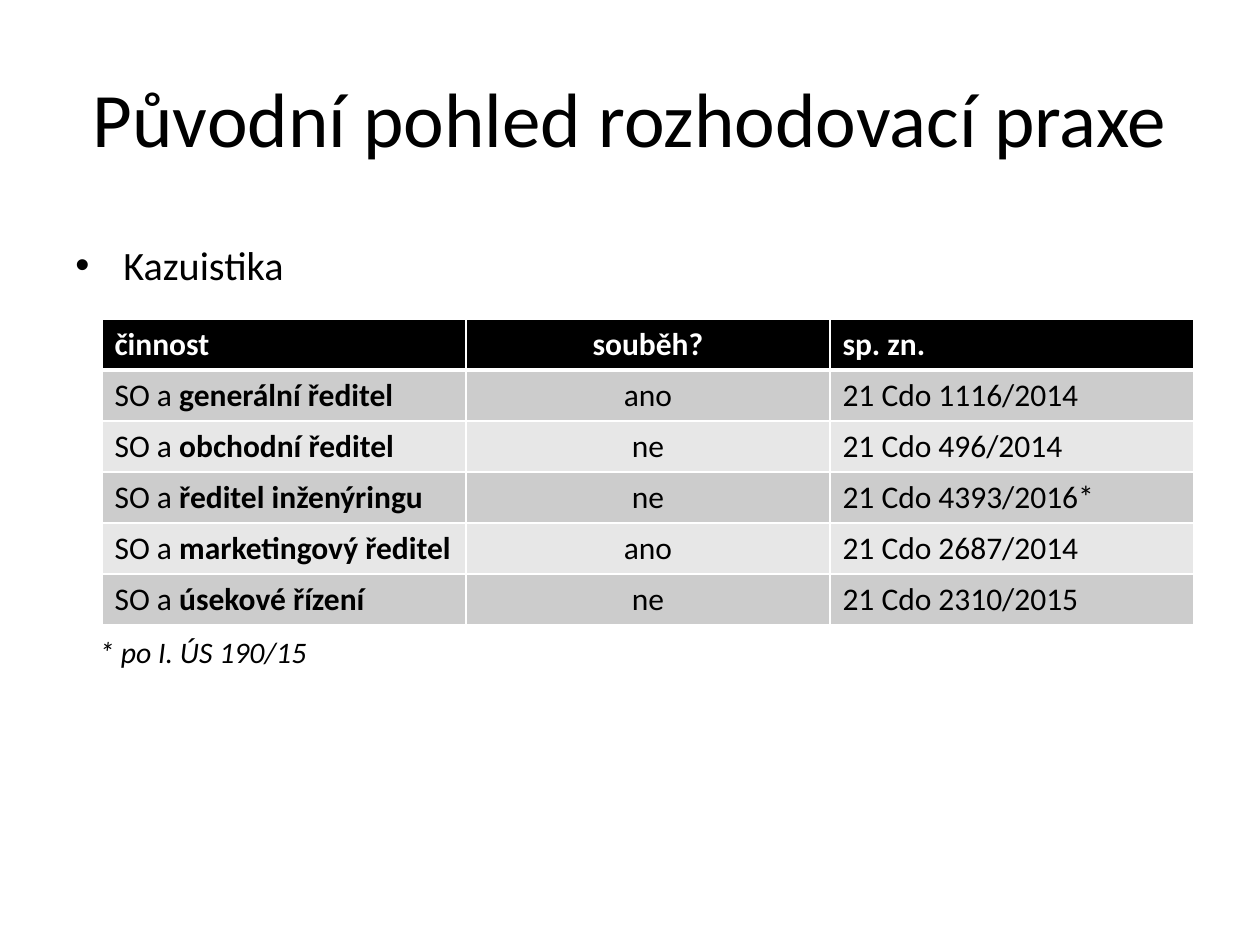
from lxml import etree
from pptx import Presentation
from pptx.dml.color import RGBColor
from pptx.enum.text import MSO_ANCHOR, PP_ALIGN
from pptx.oxml.ns import qn
from pptx.util import Emu, Pt

LEFT, CENTER = PP_ALIGN.LEFT, PP_ALIGN.CENTER
TOP, MIDDLE = MSO_ANCHOR.TOP, MSO_ANCHOR.MIDDLE
EMU_PER_PX = 914400 / 126
FONT = "Calibri"
COLORS = {
    "text": "000000",
    "header": "000000",
    "header_text": "FFFFFF",
    "band_dark": "CCCCCC",
    "band_light": "E7E7E7",
    "border": "FFFFFF",
}
HEADINGS = ("činnost", "souběh?", "sp. zn.")
CASES = [
    ("generální ředitel", "ano", "21 Cdo 1116/2014"),
    ("obchodní ředitel", "ne", "21 Cdo 496/2014"),
    ("ředitel inženýringu", "ne", "21 Cdo 4393/2016*"),
    ("marketingový ředitel", "ano", "21 Cdo 2687/2014"),
    ("úsekové řízení", "ne", "21 Cdo 2310/2015"),
]
COLUMN_WIDTH, ROW_HEIGHT = 364, 51


def px(length):
    return Emu(round(length * EMU_PER_PX))


def style_paragraph(para, size, color="text", align=LEFT):
    para.alignment = align
    para.font.name = FONT
    para.font.size = Pt(size)
    para.font.color.rgb = RGBColor.from_string(COLORS[color])


def add_text(slide, bounds, text, size, align=LEFT, anchor=TOP):
    box = slide.shapes.add_textbox(*map(px, bounds))
    frame = box.text_frame
    frame.word_wrap = True
    frame.vertical_anchor = anchor
    para = frame.paragraphs[0]
    para.text = text
    style_paragraph(para, size, align=align)
    return para


def add_bullet(para, indent):
    properties = para._p.get_or_add_pPr()
    properties.set("marL", str(px(indent)))
    properties.set("indent", str(-px(indent)))
    etree.SubElement(properties, qn("a:buFont"), typeface="Arial")
    bullet = etree.SubElement(properties, qn("a:buChar"), char="•")
    # Bullet markup has to precede the default run properties.
    for run_defaults in properties.findall(qn("a:defRPr")):
        properties.append(run_defaults)
    return bullet


def set_borders(cell, top, bottom):
    """Draw all four cell borders, 1 pt wide at the sides."""
    properties = cell._tc.get_or_add_tcPr()
    widths = {"lnL": 1, "lnR": 1, "lnT": top, "lnB": bottom}
    for position, (side, width) in enumerate(widths.items()):
        line = etree.Element(qn(f"a:{side}"), w=str(Pt(width)))
        fill = etree.SubElement(line, qn("a:solidFill"))
        etree.SubElement(fill, qn("a:srgbClr"), val=COLORS["border"])
        properties.insert(position, line)


def fill_cell(cell, parts, fill, color, align):
    """Write (text, bold) parts into a cell with a solid fill."""
    cell.fill.solid()
    cell.fill.fore_color.rgb = RGBColor.from_string(COLORS[fill])
    para = cell.text_frame.paragraphs[0]
    style_paragraph(para, 18, color, align)
    for text, bold in parts:
        span = para.add_run()
        span.text = text
        span.font.bold = bold
        span.font.name = FONT
        span.font.size = Pt(18)
        span.font.color.rgb = RGBColor.from_string(COLORS[color])


def add_case_table(slide, left, top):
    rows = [[[(heading, True)] for heading in HEADINGS]]
    for role, answer, reference in CASES:
        rows.append([
            [("SO a ", False), (role, True)],
            [(answer, False)],
            [(reference, False)],
        ])
    width, height = COLUMN_WIDTH * len(HEADINGS), ROW_HEIGHT * len(rows)
    bounds = map(px, (left, top, width, height))
    table = slide.shapes.add_table(len(rows), len(HEADINGS), *bounds).table
    for column in table.columns:
        column.width = px(COLUMN_WIDTH)
    for row_index, row in enumerate(rows):
        table.rows[row_index].height = px(ROW_HEIGHT)
        is_header = row_index == 0
        band = "band_dark" if row_index % 2 else "band_light"
        fill = "header" if is_header else band
        color = "header_text" if is_header else "text"
        for column_index, parts in enumerate(row):
            cell = table.cell(row_index, column_index)
            align = CENTER if column_index == 1 else LEFT
            fill_cell(cell, parts, fill, color, align)
            set_borders(cell, 3 if row_index == 1 else 1, 3 if is_header else 1)


def main():
    deck = Presentation()
    deck.slide_width, deck.slide_height = px(1260), px(945)
    slide = deck.slides.add_slide(deck.slide_layouts[6])
    add_text(slide, (63, 38, 1134, 158), "Původní pohled rozhodovací praxe",
             44, CENTER, MIDDLE)
    topic = add_text(slide, (63, 234, 1172, 62), "Kazuistika", 23)
    add_bullet(topic, 48)
    add_case_table(slide, 102, 319)
    footnote = add_text(slide, (87, 628, 1148, 49), "* po I. ÚS 190/15", 17)
    footnote.font.italic = True
    deck.save("out.pptx")


if __name__ == "__main__":
    main()
